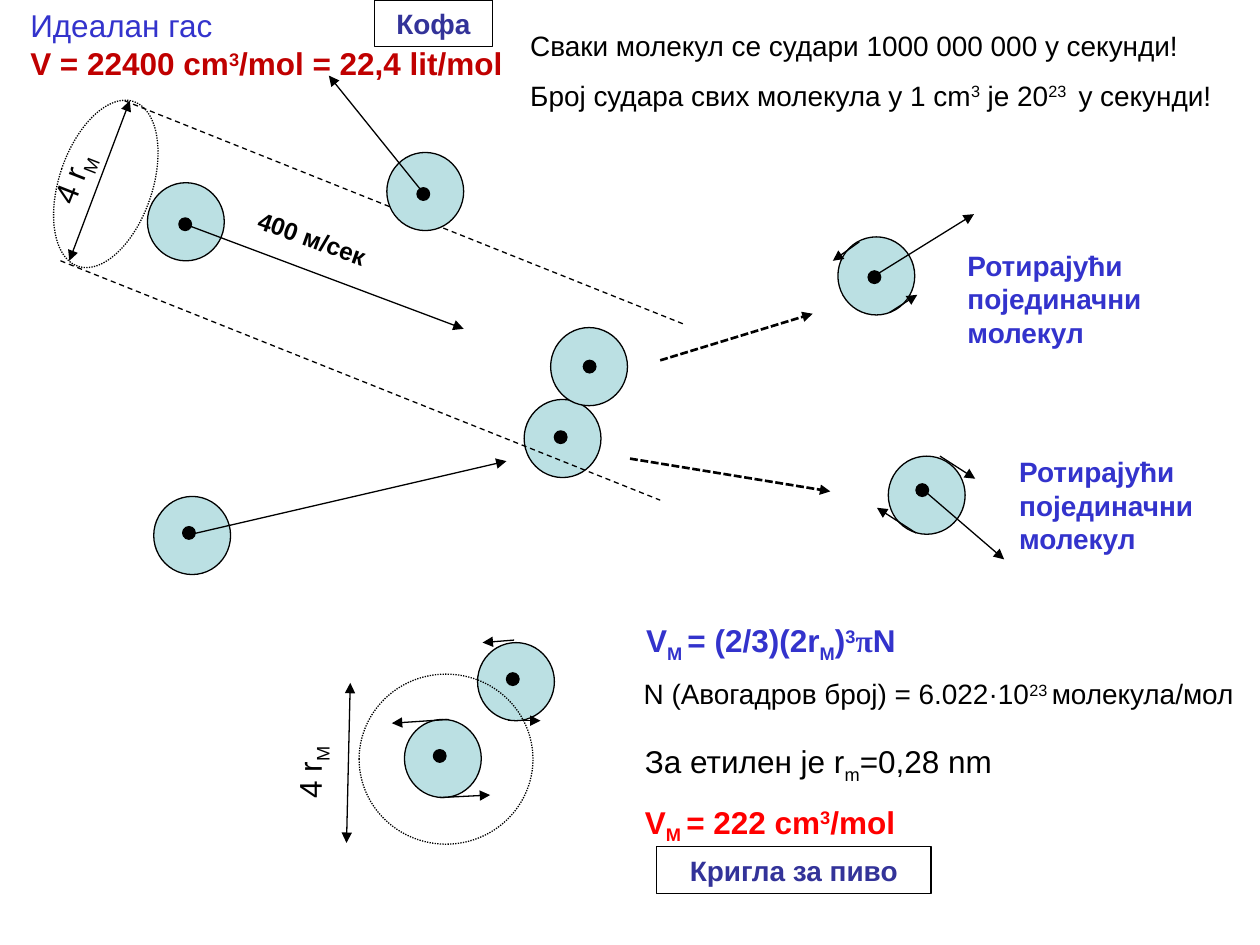
from lxml.etree import SubElement as Sub
from pptx import Presentation
from pptx.dml.color import RGBColor as RGB
from pptx.enum.dml import MSO_LINE as Dash
from pptx.enum.shapes import MSO_CONNECTOR as Conn, MSO_SHAPE as Geo
from pptx.enum.text import MSO_ANCHOR as Anchor, MSO_AUTO_SIZE as Fit, PP_ALIGN as Align
from pptx.oxml.ns import qn
from pptx.util import Cm, Pt

THEME = {
    "ink": "000000", "ball": "BBE0E3", "blue": "3333CC", "navy": "333399",
    "wine": "C00000", "red": "FF0000",
    "tiny": 14, "text": 16, "big": 18, "thin": 0.75, "thick": 1.5,
    "font": "Arial", "greek": "Times New Roman",
}
BASE = {"sub": "-25000", "sup": "30000"}
BALL, DOT = (0.61, 0.62), (0.1, 0.1)

# ball left, top, then dot left, top
BACK = [
    (1.17, 1.45, 1.42, 1.73), (1.22, 3.94, 1.45, 4.18),
    (4.16, 3.17, 4.4, 3.42), (4.37, 2.6, 4.63, 2.86),
    (7.05, 3.62, 7.27, 3.84), (6.65, 1.88, 6.89, 2.15),
]
FRONT = [(3.07, 1.21, 3.31, 1.49), (3.21, 5.71, 3.44, 5.95), (3.79, 5.1, 4.02, 5.34)]
RINGS = [(0.47, 0.77, 0.74, 1.38, 18.7), (2.85, 5.35, 1.38, 1.35, 0)]
TUBE = [(0.99, 0.8, 5.42, 2.57), (0.48, 2.07, 5.24, 3.97)]
SPANS = [(1.03, 0.8, 0.55, 2.07), (2.78, 5.42, 2.75, 6.69)]
PATHS = [
    (1.47, 1.78, 3.68, 2.61), (1.52, 4.24, 4.02, 3.66), (3.35, 1.52, 2.61, 0.6),
    (6.94, 2.19, 7.73, 1.7), (7.33, 3.89, 7.97, 4.44),
]
SPINS = [
    (6.82, 1.92, 6.61, 2.07), (7.06, 2.48, 7.28, 2.34),
    (7.27, 4.23, 6.96, 4.03), (7.46, 3.62, 7.74, 3.8),
    (4.08, 5.08, 3.83, 5.1), (4.03, 5.72, 4.29, 5.72),
    (3.49, 6.33, 3.89, 6.31), (3.56, 5.71, 3.11, 5.74),
]
EXITS = [(5.24, 2.86, 6.45, 2.49), (5, 3.64, 6.59, 3.9)]

# paragraph: size, colour, bold, runs
HEAD = [
    ("big", "blue", False, [("Идеалан гас", "")]),
    ("big", "wine", True, [("V = 22400 cm", ""), ("3", "sup"), ("/mol = 22,4 lit/mol", "")]),
]
WIDTH = [("big", "ink", False, [("4 r", ""), ("М", "sub")])]
ROTOR = [("text", "blue", True, [("Ротирајући појединачни молекул", "")])]
NOTES = [
    ((0.19, 1.1, 0.85, 0.4), 291.4, WIDTH),
    ((2.03, 5.81, 0.85, 0.4), 270, WIDTH),
    ((7.58, 1.92, 1.78, 0.91), 0, ROTOR),
    ((7.99, 3.56, 1.78, 0.91), 0, ROTOR),
    ((1.92, 1.79, 1.49, 0.34), 19.8, [("tiny", "ink", True, [("400 м/сек", "")])]),
    ((4.11, 0.18, 5.89, 0.77), 0, [
        ("text", "ink", False, [("Сваки молекул се судари 1000 000 000 у секунди!", "")]),
        ("text", "ink", False, [("Број судара свих молекула у 1 cm", ""), ("3", "sup"),
                                (" је 20", ""), ("23 ", "sup"), (" у секунди!", "")]),
    ]),
    ((5.03, 4.88, 3.28, 0.4), 0, [
        ("big", "blue", True, [("V", ""), ("М ", "sub"), ("= (2/3)(2r", ""), ("М", "sub"),
                               (")", ""), ("3", "sup"), ("π", "greek"), ("N", "")]),
    ]),
    ((5.01, 5.32, 4.99, 0.37), 0, [
        ("text", "ink", False, [("N (Авогадров број) = 6.022·10", ""), ("23 ", "sup"),
                                ("молекула/мол", "")]),
    ]),
    ((5.02, 5.84, 3.88, 0.85), 0, [
        ("big", "ink", False, [("За етилен је r", ""), ("m", "sub"), ("=0,28 nm", "")]),
        ("big", "red", True, [("V", ""), ("М ", "sub"), ("= 222 cm", ""), ("3", "sup"),
                              ("/mol", "")]),
    ]),
]
TAGS = [((2.97, 0, 0.94, 0.37), "Кофа"), ((5.21, 6.72, 2.18, 0.37), "Кригла за пиво")]


def inch(vals):
    return [Cm(2.54 * v) for v in vals]


def hue(key):
    return RGB.from_string(THEME[key])


def write(shape, paras, gap=True, align=Align.LEFT):
    frame = shape.text_frame
    frame.word_wrap = True
    frame.auto_size = Fit.SHAPE_TO_FIT_TEXT
    for i, (size, tint, bold, runs) in enumerate(paras):
        para = frame.add_paragraph() if i else frame.paragraphs[0]
        para.alignment = align
        para.space_before = Pt(THEME[size] / 2 + 1 if i and gap else 0)
        for text, kind in runs:
            run = para.add_run()
            run.text = text
            font = run.font
            font.name = THEME["greek" if kind == "greek" else "font"]
            font.size, font.bold = Pt(THEME[size]), bold
            font.color.rgb = hue(tint)
            if kind in BASE:
                font._element.set("baseline", BASE[kind])


def form(geo, box, fill=None, dash=None, turn=0):
    shape = slide.shapes.add_shape(geo, *inch(box))
    shape.shadow.inherit = False
    shape.rotation = turn
    if fill:
        shape.fill.solid()
        shape.fill.fore_color.rgb = hue(fill)
    else:
        shape.fill.background()
    stroke(shape.line, "thin", dash)
    return shape


def stroke(line, width, dash):
    line.color.rgb = hue("ink")
    line.width = Pt(THEME[width])
    if dash:
        line.dash_style = dash


def link(ends, tips=("tailEnd",), width="thin", dash=None):
    line = slide.shapes.add_connector(Conn.STRAIGHT, *inch(ends))
    stroke(line.line, width, dash)
    for tip in tips:
        Sub(line.line._get_or_add_ln(), qn("a:" + tip), type="triangle")
    Sub(line._element.spPr, qn("a:effectLst"))


def balls(rows):
    for x, y, dx, dy in rows:
        form(Geo.OVAL, (x, y, *BALL), "ball")
        form(Geo.OVAL, (dx, dy, *DOT), "ink")


deck = Presentation()
deck.slide_width, deck.slide_height = inch((10, 7.5))
slide = deck.slides.add_slide(deck.slide_layouts[5])
title = slide.shapes.title
title.left, title.top, title.width, title.height = inch((0.14, 0, 3.97, 0.71))
title.text_frame.vertical_anchor = Anchor.TOP
write(title, HEAD, gap=False)

balls(BACK)
for ends in TUBE:
    link(ends, (), dash=Dash.DASH)
balls(FRONT)
for *box, turn in RINGS:
    form(Geo.OVAL, box, dash=Dash.ROUND_DOT, turn=turn)
for ends in SPANS:
    link(ends, ("headEnd", "tailEnd"))
for ends in PATHS + SPINS:
    link(ends)
for ends in EXITS:
    link(ends, width="thick", dash=Dash.SQUARE_DOT)
for box, turn, paras in NOTES:
    note = slide.shapes.add_textbox(*inch(box))
    note.rotation = turn
    write(note, paras)
for box, text in TAGS:
    write(form(Geo.RECTANGLE, box), [("text", "navy", True, [(text, "")])], align=Align.CENTER)

deck.save("out.pptx")
